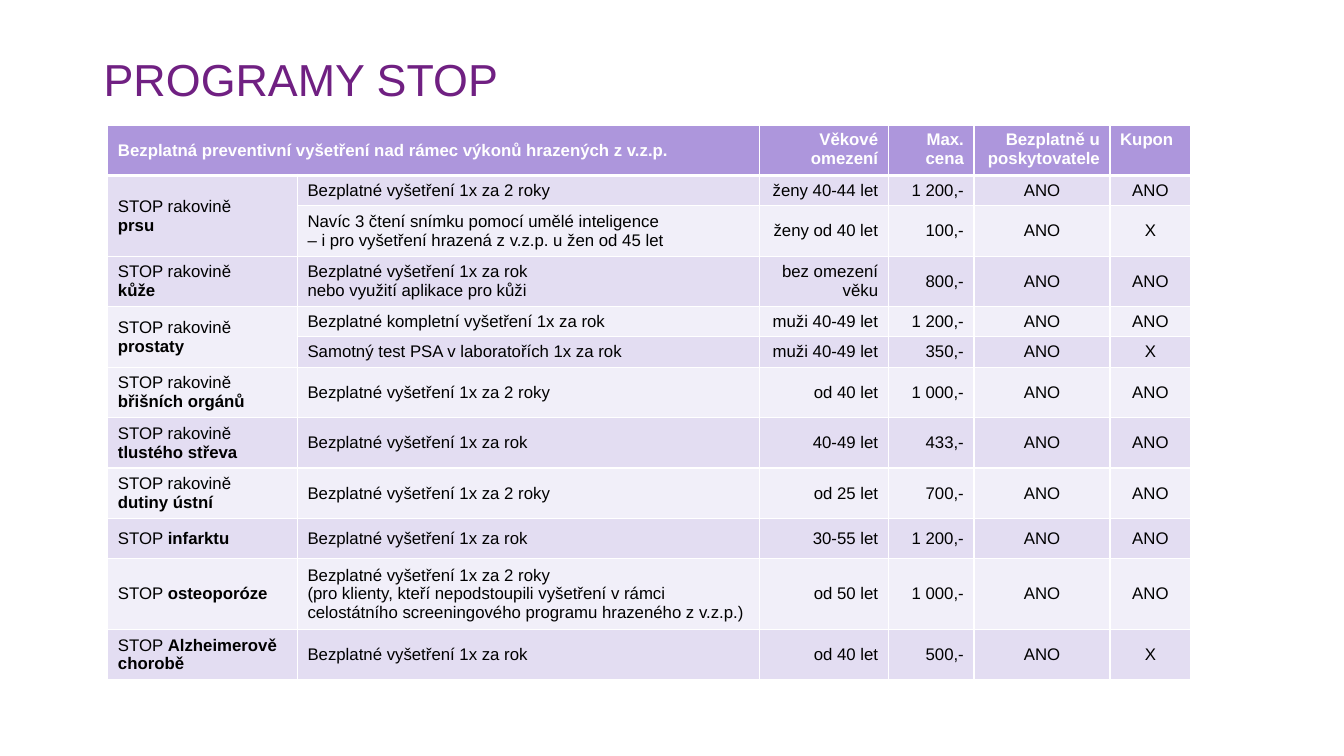
from lxml.etree import SubElement
from pptx import Presentation
from pptx.dml.color import RGBColor
from pptx.enum.text import MSO_ANCHOR, PP_ALIGN
from pptx.oxml.ns import qn
from pptx.util import Inches, Pt

TITLE = "PROGRAMY STOP"
HEADINGS = [
    "Bezplatná preventivní vyšetření nad rámec výkonů hrazených z v.z.p.",
    "",
    "Věkové omezení",
    "Max. cena",
    "Bezplatně u poskytovatele",
    "Kupon",
]
YEARLY = "Bezplatné vyšetření 1x za rok"
BIENNIAL = "Bezplatné vyšetření 1x za 2 roky"
CANCER = "STOP rakovině "
PROGRAMS = [
    ((CANCER + "\n", "prsu"), [BIENNIAL], "ženy 40-44 let", "1 200,-", "ANO", "ANO"),
    (None, ["Navíc 3 čtení snímku pomocí umělé inteligence",
            "– i pro vyšetření hrazená z v.z.p. u žen od 45 let"],
     "ženy od 40 let", "100,-", "ANO", "X"),
    ((CANCER + "\n", "kůže"), [YEARLY, "nebo využití aplikace pro kůži"],
     "bez omezení věku", "800,-", "ANO", "ANO"),
    ((CANCER, "prostaty"), ["Bezplatné kompletní vyšetření 1x za rok"],
     "muži 40-49 let", "1 200,-", "ANO", "ANO"),
    (None, ["Samotný test PSA v laboratořích 1x za rok"],
     "muži 40-49 let", "350,-", "ANO", "X"),
    ((CANCER, "břišních orgánů"), [BIENNIAL], "od 40 let", "1 000,-", "ANO", "ANO"),
    ((CANCER, "tlustého střeva"), [YEARLY], "40-49 let", "433,-", "ANO", "ANO"),
    ((CANCER + "\n", "dutiny ústní"), [BIENNIAL], "od 25 let", "700,-", "ANO", "ANO"),
    (("STOP ", "infarktu"), [YEARLY], "30-55 let", "1 200,-", "ANO", "ANO"),
    (("STOP ", "osteoporóze"),
     [BIENNIAL, "(pro klienty, kteří nepodstoupili vyšetření v rámci "
      "celostátního screeningového programu hrazeného z v.z.p.)"],
     "od 50 let", "1 000,-", "ANO", "ANO"),
    (("STOP ", "Alzheimerově chorobě"), [YEARLY], "od 40 let", "500,-", "ANO", "X"),
]
COLUMN_WIDTHS = [1.88, 4.58, 1.28, 0.85, 1.35, 0.8]
ROW_HEIGHTS = [0.49, 0.3, 0.49, 0.4, 0.29, 0.28, 0.4, 0.35, 0.44, 0.4, 0.4, 0.4]
LEFT, RIGHT, CENTER = PP_ALIGN.LEFT, PP_ALIGN.RIGHT, PP_ALIGN.CENTER
HEADING_ALIGNMENTS = [LEFT, LEFT, RIGHT, RIGHT, RIGHT, LEFT]
BODY_ALIGNMENTS = [LEFT, LEFT, RIGHT, RIGHT, CENTER, CENTER]
PURPLE, LAVENDER, WHITE, BLACK = "702082", "AD96DC", "FFFFFF", "000000"
BANDS = ["E3DDF2", "F1EFF9"]
TITLE_FORMAT = {"name": "Arial", "size": Pt(32), "bold": False}
HEADING_FORMAT = {"name": "Arial", "size": Pt(12), "bold": True}
BODY_FORMAT = {"name": "Arial", "size": Pt(12), "bold": False}
BOLD_FORMAT = {**BODY_FORMAT, "bold": True}


def color(hex_string):
    return RGBColor.from_string(hex_string)


def add_run(paragraph, text, values, text_color):
    run = paragraph.add_run()
    run.text = text
    for name, value in values.items():
        setattr(run.font, name, value)
    run.font.color.rgb = color(text_color)


def style_cell(cell, fill, bottom_width):
    properties = cell._tc.get_or_add_tcPr()
    for side, width in (("L", 1), ("R", 1), ("T", 1), ("B", bottom_width)):
        line = SubElement(properties, qn(f"a:ln{side}"), w=str(Pt(width)))
        line_fill = SubElement(line, qn("a:solidFill"))
        SubElement(line_fill, qn("a:srgbClr"), val=WHITE)
    cell.fill.solid()
    cell.fill.fore_color.rgb = color(fill)


def write_lines(cell, lines, alignment, values, text_color):
    for index, text in enumerate(lines):
        frame = cell.text_frame
        paragraph = frame.add_paragraph() if index else frame.paragraphs[0]
        paragraph.alignment = alignment
        add_run(paragraph, text, values, text_color)


def write_program(cell, plain, bold):
    paragraph = cell.text_frame.paragraphs[0]
    add_run(paragraph, plain.rstrip("\n"), BODY_FORMAT, BLACK)
    if plain.endswith("\n"):
        paragraph.add_line_break()
    add_run(paragraph, bold, BOLD_FORMAT, BLACK)


def add_title(slide):
    box = slide.shapes.add_textbox(Inches(0.93), Inches(0.41), Inches(8.94), Inches(0.81))
    frame = box.text_frame
    frame.word_wrap = True
    frame.vertical_anchor = MSO_ANCHOR.MIDDLE
    frame.paragraphs[0].line_spacing = 0.9
    add_run(frame.paragraphs[0], TITLE, TITLE_FORMAT, PURPLE)


def add_programs(slide):
    table = slide.shapes.add_table(
        len(ROW_HEIGHTS), len(COLUMN_WIDTHS), Inches(1.07), Inches(1.24),
        Inches(sum(COLUMN_WIDTHS)), Inches(sum(ROW_HEIGHTS))).table
    for column, width in zip(table.columns, COLUMN_WIDTHS):
        column.width = Inches(width)
    for row, height in zip(table.rows, ROW_HEIGHTS):
        row.height = Inches(height)

    for column, (heading, alignment) in enumerate(zip(HEADINGS, HEADING_ALIGNMENTS)):
        cell = table.cell(0, column)
        style_cell(cell, LAVENDER, 3)
        if heading:
            write_lines(cell, [heading], alignment, HEADING_FORMAT, WHITE)
    table.cell(0, 0).vertical_anchor = MSO_ANCHOR.MIDDLE
    table.cell(0, 0).merge(table.cell(0, 1))

    for row, (program, *details) in enumerate(PROGRAMS, 1):
        for column, alignment in enumerate(BODY_ALIGNMENTS):
            cell = table.cell(row, column)
            style_cell(cell, BANDS[(row - 1) % 2], 1)
            cell.vertical_anchor = MSO_ANCHOR.MIDDLE
            if column:
                content = details[column - 1]
                lines = content if isinstance(content, list) else [content]
                write_lines(cell, lines, alignment, BODY_FORMAT, BLACK)
            elif program:
                write_program(cell, *program)
        if program is None:
            table.cell(row - 1, 0).merge(table.cell(row, 0))


def main():
    presentation = Presentation()
    presentation.slide_width = Inches(13.33)
    presentation.slide_height = Inches(7.5)
    slide = presentation.slides.add_slide(presentation.slide_layouts[6])
    add_title(slide)
    add_programs(slide)
    presentation.save("out.pptx")


if __name__ == "__main__":
    main()
